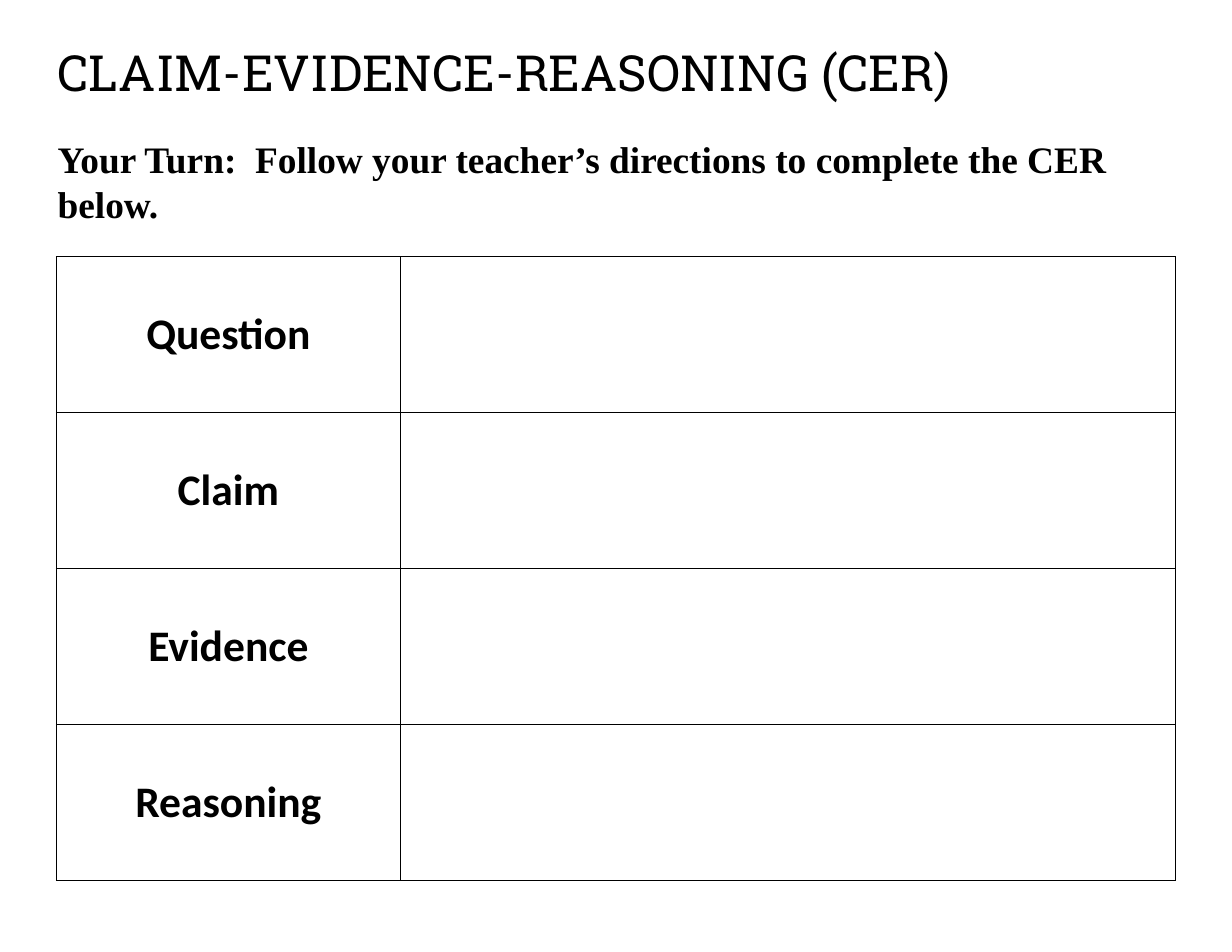
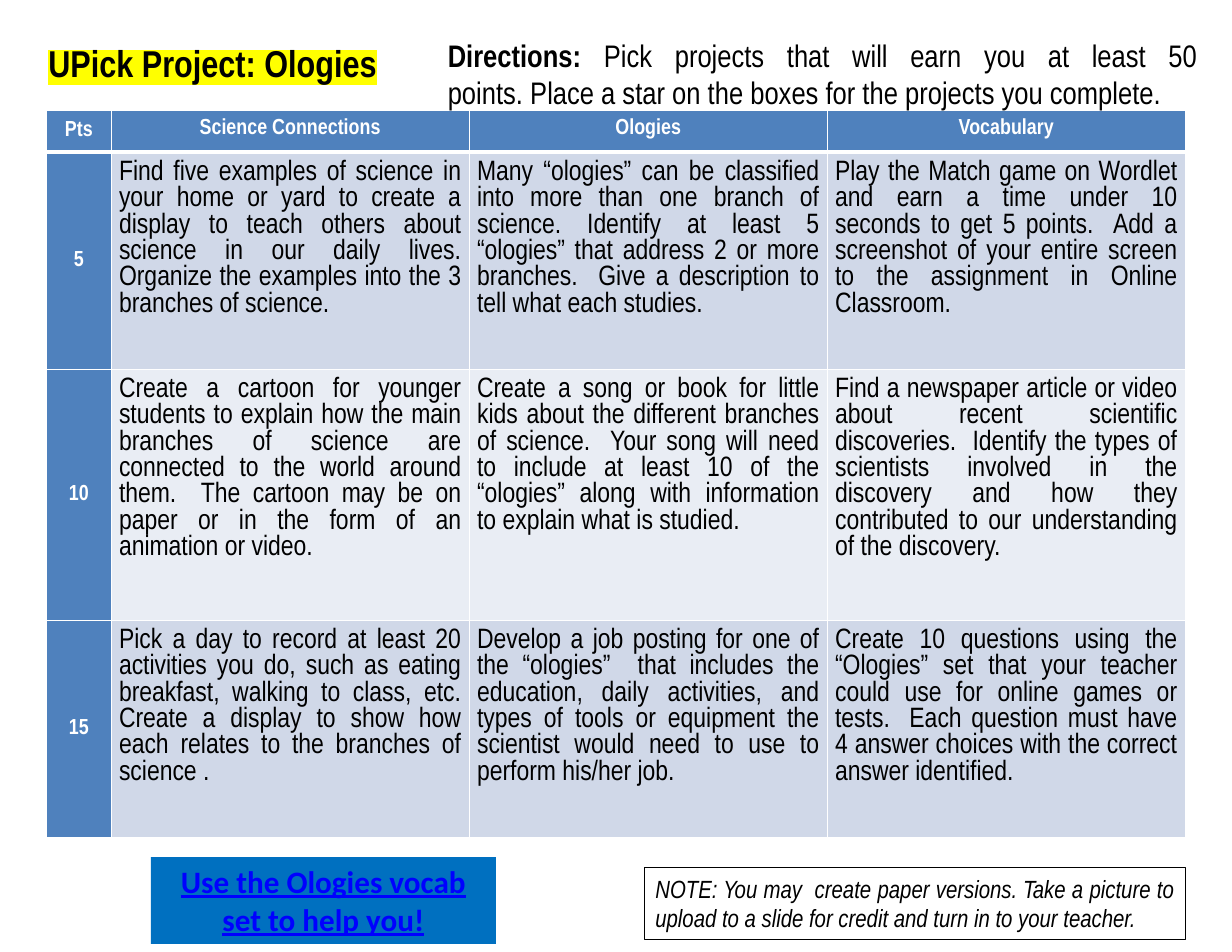
from dataclasses import dataclass

from lxml import etree
from pptx import Presentation
from pptx.dml.color import RGBColor
from pptx.enum.shapes import MSO_SHAPE
from pptx.enum.text import MSO_ANCHOR, PP_ALIGN
from pptx.oxml.ns import qn
from pptx.util import Pt

LEFT, CENTER, JUSTIFY = PP_ALIGN.LEFT, PP_ALIGN.CENTER, PP_ALIGN.JUSTIFY
TOP, MIDDLE = MSO_ANCHOR.TOP, MSO_ANCHOR.MIDDLE
RECTANGLE = MSO_SHAPE.RECTANGLE
NO_BREAK_SPACE = chr(160)


@dataclass(frozen=True)
class Theme:
    black: str = "000000"
    white: str = "FFFFFF"
    yellow: str = "FFFF00"
    header: str = "4F81BD"
    band_dark: str = "D0D8E8"
    band_light: str = "E9EDF4"
    button: str = "0070C0"
    link: str = "0000FF"
    slab: str = "Roboto Slab"
    serif: str = "Times New Roman"
    sans: str = "Calibri"
    narrow: str = "Arial Narrow"
    title: int = 32
    label: int = 28
    heading: int = 24
    directions: int = 20
    body: int = 18
    note: int = 16
    small: int = 14


theme = Theme()


def write(frame, runs, font, size, color=theme.black, align=LEFT, anchor=TOP):
    frame.word_wrap = True
    frame.vertical_anchor = anchor
    para = frame.paragraphs[0]
    para.alignment = align
    for text, bold in runs:
        span = para.add_run()
        span.text = text
        span.font.name = font
        span.font.size = Pt(size)
        span.font.bold = bold
        span.font.color.rgb = RGBColor.from_string(color)
    return para.runs[0]


def set_borders(cell, color, top=1, bottom=1):
    properties = cell._tc.get_or_add_tcPr()
    for side, width in (("L", 1), ("R", 1), ("T", top), ("B", bottom)):
        line = etree.SubElement(properties, qn(f"a:ln{side}"), w=str(Pt(width)))
        fill = etree.SubElement(line, qn("a:solidFill"))
        etree.SubElement(fill, qn("a:srgbClr"), val=color)


deck = Presentation()
deck.slide_width, deck.slide_height = Pt(792), Pt(612)
blank = deck.slide_layouts[6]

page = deck.slides.add_slide(blank)
box = page.shapes.add_textbox(Pt(30), Pt(23.5), Pt(732), Pt(46))
write(box.text_frame, [("CLAIM-EVIDENCE-REASONING (CER)", False)], theme.slab, theme.title)
box = page.shapes.add_textbox(Pt(30), Pt(84), Pt(732), Pt(65.5))
write(
    box.text_frame,
    [("Your Turn:  Follow your teacher’s directions to complete the CER below.", True)],
    theme.serif,
    theme.heading,
)

steps = ["Question", "Claim", "Evidence", "Reasoning"]
table = page.shapes.add_table(len(steps), 2, Pt(36.3), Pt(165), Pt(719.4), Pt(401.2)).table
table.first_row = table.horz_banding = False
table.columns[0].width, table.columns[1].width = Pt(221), Pt(498.4)
for row, step in enumerate(steps):
    table.rows[row].height = Pt(100.3)
    for column in range(2):
        cell = table.cell(row, column)
        set_borders(cell, theme.black)
        cell.fill.background()
    cell = table.cell(row, 0)
    cell.vertical_anchor = MIDDLE
    write(cell.text_frame, [(step, True)], theme.sans, theme.label, align=CENTER, anchor=MIDDLE)

page = deck.slides.add_slide(blank)
box = page.shapes.add_textbox(Pt(24), Pt(22), Pt(744), Pt(36))
span = write(box.text_frame, [("UPick Project: Ologies", True)], theme.narrow, theme.heading)
highlight = etree.Element(qn("a:highlight"))
etree.SubElement(highlight, qn("a:srgbClr"), val=theme.yellow)
span._r.rPr.find(qn("a:solidFill")).addnext(highlight)

projects = [
    ["Pts", "Science Connections", "Ologies", "Vocabulary"],
    [
        "5",
        "Find five examples of science in your home or yard to create a display to teach others about science in our daily lives. Organize the examples into the 3 branches of science.",
        "Many “ologies” can be classified into more than one branch of science. Identify at least 5 “ologies” that address 2 or more branches.  Give a description to tell what each studies.",
        "Play the Match game on Wordlet and earn a time under 10 seconds to get 5 points.  Add a screenshot of your entire screen to the assignment in Online Classroom.",
    ],
    [
        "10",
        "Create a cartoon for younger students to explain how the main branches of science are connected to the world around them.  The cartoon may be on paper or in the form of an animation or video.",
        "Create a song or book for little kids about the different branches of science.  Your song will need to include at least 10 of the “ologies” along with information to explain what is studied.",
        "Find a newspaper article or video about recent scientific discoveries.  Identify the types of scientists involved in the discovery and how they contributed to our understanding of the discovery.",
    ],
    [
        "15",
        "Pick a day to record at least 20 activities you do, such as eating breakfast, walking to class, etc. Create a display to show how each relates to the branches of science .",
        "Develop a job posting for one of the “ologies”  that includes the education, daily activities, and types of tools or equipment the scientist would need to use to perform his/her job.",
        "Create 10 questions using the “Ologies” set that your teacher could use for online games or tests.  Each question must have 4 answer choices with the correct answer identified.",
    ],
]
widths = [41.5, 230.2, 230.2, 230.2]
heights = [26.8, 139.5, 161.2, 139.5]
table = page.shapes.add_table(4, 4, Pt(30), Pt(71), Pt(sum(widths)), Pt(sum(heights))).table
for column, width in enumerate(widths):
    table.columns[column].width = Pt(width)
for row, height in enumerate(heights):
    table.rows[row].height = Pt(height)
    for column, text in enumerate(projects[row]):
        cell = table.cell(row, column)
        is_points = column == 0
        is_header = row == 0 or is_points
        band = theme.band_dark if row % 2 else theme.band_light
        set_borders(cell, theme.white, top=3 if row == 1 else 1, bottom=3 if row == 0 else 1)
        cell.fill.solid()
        cell.fill.fore_color.rgb = RGBColor.from_string(theme.header if is_header else band)
        margin = Pt(0.72 if is_points else 5.04)
        cell.margin_left = cell.margin_right = cell.margin_top = cell.margin_bottom = margin
        cell.vertical_anchor = MIDDLE if is_points else TOP
        write(
            cell.text_frame,
            [(text, is_header)],
            theme.narrow,
            theme.small if is_header else theme.body,
            theme.white if is_header else theme.black,
            CENTER if is_header else JUSTIFY,
            cell.vertical_anchor,
        )

box = page.shapes.add_textbox(Pt(280.8), Pt(19.8), Pt(496), Pt(55.5))
write(
    box.text_frame,
    [
        ("Directions: ", True),
        (f"Pick projects that will earn you at least 50 points.{NO_BREAK_SPACE}Place a star on the boxes for the projects you complete.", False),
    ],
    theme.narrow,
    theme.directions,
    align=JUSTIFY,
)

note = page.shapes.add_shape(RECTANGLE, Pt(414.2), Pt(557.8), Pt(348), Pt(46))
note.line.color.rgb = RGBColor.from_string(theme.black)
note.line.width = Pt(0.75)
span = write(
    note.text_frame,
    [("NOTE: You may  create paper versions. Take a picture to upload to a slide for credit and turn in to your teacher.", False)],
    theme.narrow,
    theme.note,
    align=JUSTIFY,
)
span.font.italic = True

button = page.shapes.add_shape(RECTANGLE, Pt(97), Pt(551), Pt(221.8), Pt(55.8))
button.line.fill.background()
span = write(
    button.text_frame,
    [("Use the Ologies vocab set to help you!", True)],
    theme.sans,
    theme.directions,
    theme.link,
    CENTER,
)
span.font.underline = True

for shape, color in ((note, theme.white), (button, theme.button)):
    shape.shadow.inherit = False
    shape.fill.solid()
    shape.fill.fore_color.rgb = RGBColor.from_string(color)

deck.save("out.pptx")
